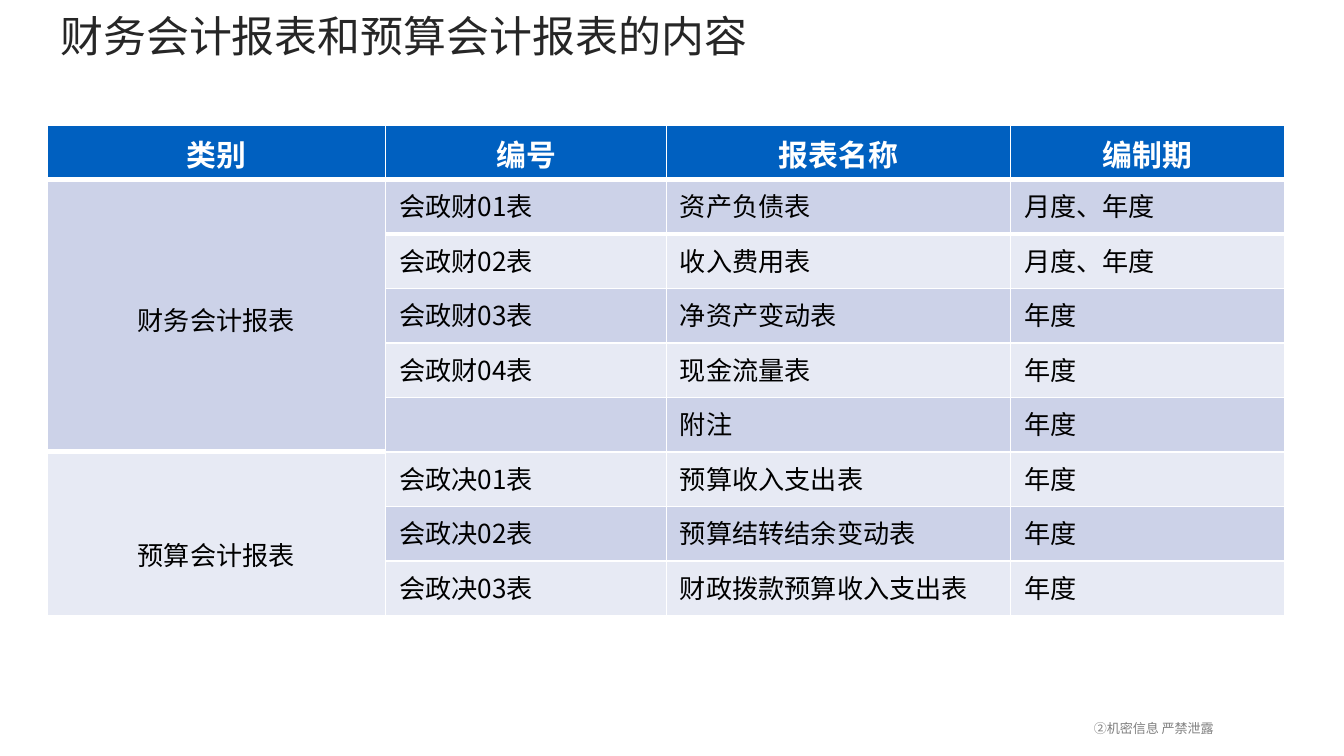
"""Build a slide listing financial and budget accounting statements."""
from pptx import Presentation
from pptx.dml.color import RGBColor
from pptx.enum.text import MSO_ANCHOR, PP_ALIGN
from pptx.oxml.ns import qn
from pptx.util import Inches, Pt
from lxml import etree

LEFT, MID, RIGHT = PP_ALIGN.LEFT, PP_ALIGN.CENTER, PP_ALIGN.RIGHT
CENTER = MSO_ANCHOR.MIDDLE
FONT = "Noto Sans CJK SC"
COLORS = {
    "title": "262626", "note": "7F7F7F", "head": "0060C0",
    "white": "FFFFFF", "text": "000000", "dark": "CCD2E8", "light": "E7EAF4",
}
TITLE = "财务会计报表和预算会计报表的内容"
NOTE = "②机密信息 严禁泄露"
HEADS = ["类别", "编号", "报表名称", "编制期"]
GROUPS = [
    ("财务会计报表", 0.9, [
        ("会政财01表", "资产负债表", "月度、年度"),
        ("会政财02表", "收入费用表", "月度、年度"),
        ("会政财03表", "净资产变动表", "年度"),
        ("会政财04表", "现金流量表", "年度"),
        ("", "附注", "年度"),
    ]),
    ("预算会计报表", 0.62, [
        ("会政决01表", "预算收入支出表", "年度"),
        ("会政决02表", "预算结转结余变动表", "年度"),
        ("会政决03表", "财政拨款预算收入支出表", "年度"),
    ]),
]
WIDTHS = [2.52, 2.09, 2.56, 2.04]
HEIGHT = 3.65


def rgb(name):
    return RGBColor.from_string(COLORS[name])


def write(frame, text, size, color, align=LEFT, bold=False):
    para = frame.paragraphs[0]
    if text:
        para.text = text
    para.alignment = align
    font = para.font
    font.name, font.size, font.bold = FONT, Pt(size), bold
    font.color.rgb = rgb(color)
    props = para._p.pPr.find(qn("a:defRPr"))
    etree.SubElement(props, qn("a:ea")).set("typeface", FONT)
    return para


def add_box(slide, place, pads):
    frame = slide.shapes.add_textbox(*map(Inches, place)).text_frame
    frame.word_wrap = True
    frame.vertical_anchor = CENTER
    frame.margin_left = frame.margin_right = Inches(pads[0])
    frame.margin_top = frame.margin_bottom = Inches(pads[1])
    return frame


def add_edge(cell, side, width):
    line = etree.Element(qn("a:" + side), w=str(Pt(width)))
    fill = etree.SubElement(line, qn("a:solidFill"))
    etree.SubElement(fill, qn("a:srgbClr"), val=COLORS["white"])
    cell._tc.get_or_add_tcPr().insert(0, line)


def fill_cell(cell, text, fill, size=14, color="text", align=LEFT, bold=False):
    cell.fill.solid()
    cell.fill.fore_color.rgb = rgb(fill)
    write(cell.text_frame, text, size, color, align, bold)


def add_grid(slide):
    count = 1 + sum(len(rows) for _, _, rows in GROUPS)
    place = map(Inches, (0.35, 0.93, sum(WIDTHS), HEIGHT))
    table = slide.shapes.add_table(count, len(HEADS), *place).table
    for col, width in zip(table.columns, WIDTHS):
        col.width = Inches(width)
    for row in table.rows:
        row.height = Inches(HEIGHT / count)
    for col, head in enumerate(HEADS):
        fill_cell(table.cell(0, col), head, "head", 16, "white", MID, True)
        add_edge(table.cell(0, col), "lnB", 3)
        add_edge(table.cell(1, col), "lnT", 3)
    top = 1
    for label, pad, rows in GROUPS:
        for num, row in enumerate(rows, top):
            fill = "dark" if num % 2 else "light"
            for col, text in enumerate(row, 1):
                fill_cell(table.cell(num, col), text, fill)
        first = table.cell(top, 0)
        first.merge(table.cell(top + len(rows) - 1, 0))
        fill_cell(first, label, "dark" if top % 2 else "light", align=MID)
        first.margin_top = Inches(pad)
        top += len(rows)


def main():
    deck = Presentation()
    deck.slide_width = Inches(10)
    deck.slide_height = deck.slide_width * 9 // 16
    slide = deck.slides.add_slide(deck.slide_layouts[6])
    note = add_box(slide, (7.32, 5.27, 1.77, 0.27), (0.06, 0.01))
    write(note, NOTE, 7, "note", RIGHT).line_spacing = Pt(10.5)
    add_grid(slide)
    title = add_box(slide, (0.35, 0, 7.8, 0.53), (0.1, 0.05))
    write(title, TITLE, 23, "title")
    deck.save("out.pptx")


if __name__ == "__main__":
    main()
